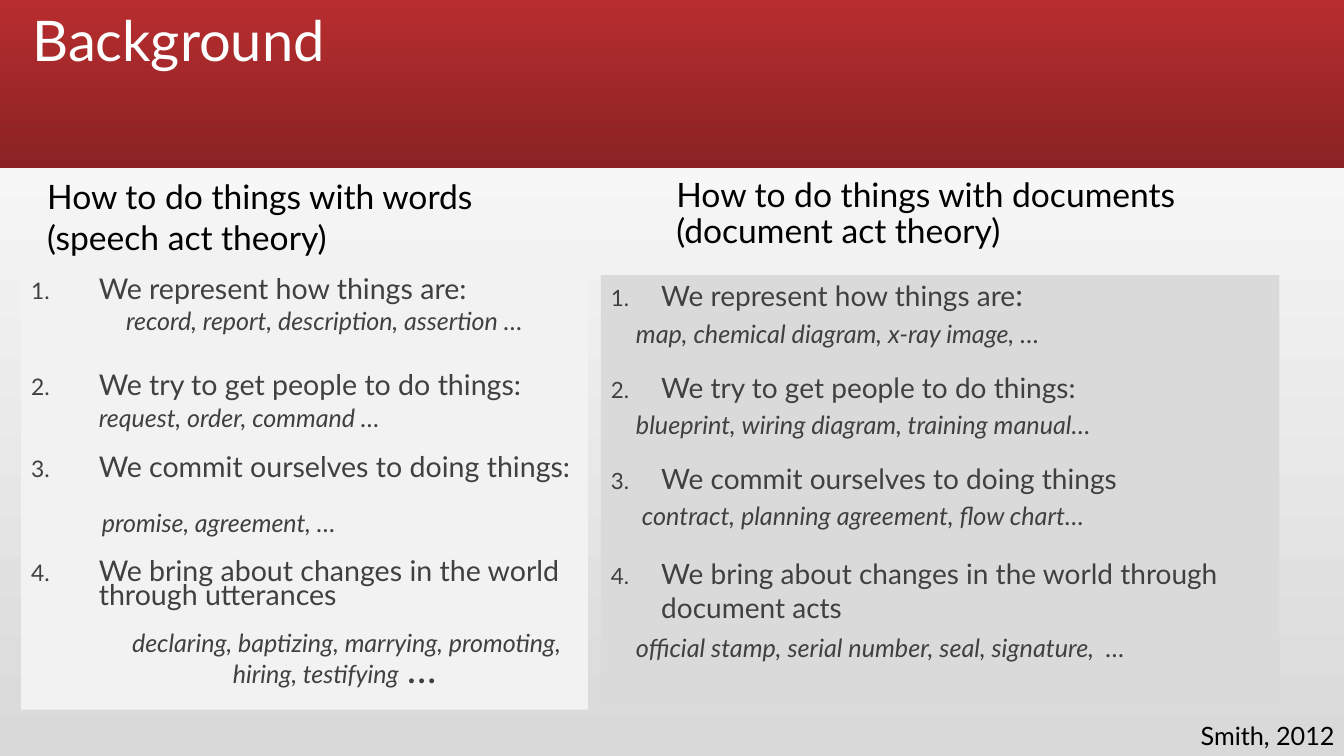
from lxml import etree
from pptx import Presentation
from pptx.dml.color import RGBColor
from pptx.enum.shapes import MSO_SHAPE
from pptx.enum.text import MSO_ANCHOR, MSO_AUTO_SIZE, PP_ALIGN
from pptx.oxml.ns import qn
from pptx.util import Inches, Pt

RECT = MSO_SHAPE.RECTANGLE
TOP = MSO_ANCHOR.TOP
LEFT = PP_ALIGN.LEFT
NO_FIT = MSO_AUTO_SIZE.NONE
GROW = MSO_AUTO_SIZE.SHAPE_TO_FIT_TEXT

COLORS = {
    "bar_top": "B82D2F", "bar_bottom": "8A2223",
    "bg_bottom": "D9D9D9", "bg_top": "FFFFFF",
    "words": "F2F2F2", "documents": "DADADA",
    "title": "FFFFFF", "heading": "000000", "body": "404040",
}


def rgb(name):
    return RGBColor.from_string(COLORS[name])


class Deck:
    """Holds the style and the current slide."""
    font = "Lato"

    def __init__(self, prs):
        self.s = prs.slides.add_slide(prs.slide_layouts[1])

    def gradient(self, fill, start, end, angle):
        fill.gradient()
        fill.gradient_angle = angle
        for stop, name in zip(fill.gradient_stops, (start, end)):
            stop.color.rgb = rgb(name)

    def panel(self, box, fill=None):
        sp = self.s.shapes.add_shape(RECT, *map(Inches, box))
        sp.shadow.inherit = False
        sp.line.fill.background()
        if fill:
            self.fill(sp, fill)
        return sp

    def fill(self, sp, name):
        sp.fill.solid()
        sp.fill.fore_color.rgb = rgb(name)

    def place(self, sp, box):
        for side, value in zip(("left", "top", "width", "height"), box):
            setattr(sp, side, Inches(value))

    def frame(self, sp, fit=NO_FIT, wrap=True):
        tf = sp.text_frame
        for key, value in {"word_wrap": wrap, "auto_size": fit,
                           "vertical_anchor": TOP}.items():
            setattr(tf, key, value)
        return tf

    def run(self, p, text, size, color, italic=False):
        r = p.add_run()
        r.text = text
        style = {"name": self.font, "size": Pt(size),
                 "bold": False, "italic": italic}
        for key, value in style.items():
            setattr(r.font, key, value)
        r.font.color.rgb = rgb(color)

    def paragraph(self, p, runs, color, spacing=1.0, before=0, level=0):
        style = {"alignment": LEFT, "level": level, "line_spacing": spacing,
                 "space_before": Pt(before), "space_after": Pt(0)}
        for key, value in style.items():
            setattr(p, key, value)
        for run in runs:
            self.run(p, run[0], run[1], color, *run[2:])

    def bullet(self, p, indent, hang, start=None):
        pPr = p._p.get_or_add_pPr()
        pPr.set("marL", str(Inches(indent)))
        pPr.set("indent", str(Inches(hang)))
        if start is None:
            etree.SubElement(pPr, qn("a:buNone"))
            return
        etree.SubElement(pPr, qn("a:buSzPct"), val="80000")
        etree.SubElement(pPr, qn("a:buFont"), typeface=self.font)
        number = etree.SubElement(pPr, qn("a:buAutoNum"), type="arabicPeriod")
        if start > 1:
            number.set("startAt", str(start))

    def text(self, box, text, size, spacing=1.0, fit=NO_FIT, wrap=True):
        sp = self.s.shapes.add_textbox(*map(Inches, box))
        tf = self.frame(sp, fit, wrap)
        self.paragraph(tf.paragraphs[0], [(text, size)], "heading", spacing)

    def outline(self, sp, items):
        tf = self.frame(sp)
        for i, (indent, runs, fmt) in enumerate(items):
            p = tf.add_paragraph() if i else tf.paragraphs[0]
            self.paragraph(p, runs, "body", **fmt)
            self.bullet(p, *indent)


def words_items():
    size, ex = 20.4, 17.9
    tight, loose = {"spacing": 0.7, "before": 18}, {"before": 18}
    return [
        ((0.67, -0.67, 1), [("We represent how things are:", size)], tight),
        ((0.44, 0), [("\t", 18.7, True),
                     ("record, report, description, assertion …", ex, True)],
         {"spacing": 0.7, "before": 6, "level": 1}),
        ((0.67, -0.67, 1), [("We try to get people to do things:", size),
                            ("\t", 25.5, True),
                            ("request, order, command …", ex, True)], loose),
        ((0.67, -0.67, 3), [("We commit ourselves to doing things:", size)],
         tight),
        ((0.2, 0), [("\t", 16.1, True), ("promise, agreement, …", ex, True)],
         {"before": 18, "level": 3}),
        ((0.67, -0.67, 3),
         [("We bring about changes in the world through utterances", size)],
         tight),
        ((2, -1), [("declaring, baptizing, marrying, promoting, hiring, "
                    "testifying", ex, True), (" …", 28.1, True)], tight),
    ]


def documents_items():
    acts = [
        ([("We represent how things are", 20), (":", 22)],
         "map, chemical diagram, x-ray image, …", 1, 0.9),
        ([("We try to get people to do things:", 20)],
         "blueprint, wiring diagram, training manual…", 1, 0.9),
        ([("We commit ourselves to doing things", 20)],
         " contract, planning agreement, flow chart…", 1, 0.9),
        ([("We bring about changes in the world through document acts", 20)],
         "official stamp, serial number, seal, signature,  …", 4, 1.0),
    ]
    items = []
    for runs, examples, start, spacing in acts:
        items.append(((0.5, -0.5, start), runs,
                      {"spacing": spacing, "before": 18}))
        items.append(((0.25, 0), [(examples, 18, True)],
                      {"spacing": spacing, "before": 6, "level": 1}))
    return items


def main():
    prs = Presentation()
    prs.slide_width, prs.slide_height = Inches(13.33), Inches(7.5)
    deck = Deck(prs)
    s = deck.s

    # Background and title bar
    deck.gradient(s.background.fill, "bg_bottom", "bg_top", 90)
    bar = deck.panel((0, 0, 13.33, 1.67))
    deck.gradient(bar.fill, "bar_top", "bar_bottom", 270)

    # Title, in front of the bar
    title = s.shapes.title
    title.element.addprevious(bar.element)
    deck.place(title, (0.22, 0.08, 12.89, 1.25))
    p = deck.frame(title).paragraphs[0]
    deck.paragraph(p, [("Background", 40)], "title", 0.9)

    # Left column: words
    body = s.placeholders[1]
    deck.place(body, (0.21, 2.73, 5.62, 4.31))
    deck.fill(body, "words")
    deck.outline(body, words_items())
    deck.text((0.37, 1.7, 5.04, 0.91),
              "How to do things with words  (speech act theory)", 24, fit=GROW)

    # Right column: documents
    panel = deck.panel((5.96, 2.73, 6.73, 4.25), "documents")
    deck.outline(panel, documents_items())
    deck.text((6.61, 1.72, 5.43, 0.79),
              "How to do things with documents (document act theory)", 24, 0.9)

    # Source
    deck.text((11.81, 7.1, 1.55, 0.4), "Smith, 2012", 18, fit=GROW, wrap=False)

    prs.save("out.pptx")


if __name__ == "__main__":
    main()
